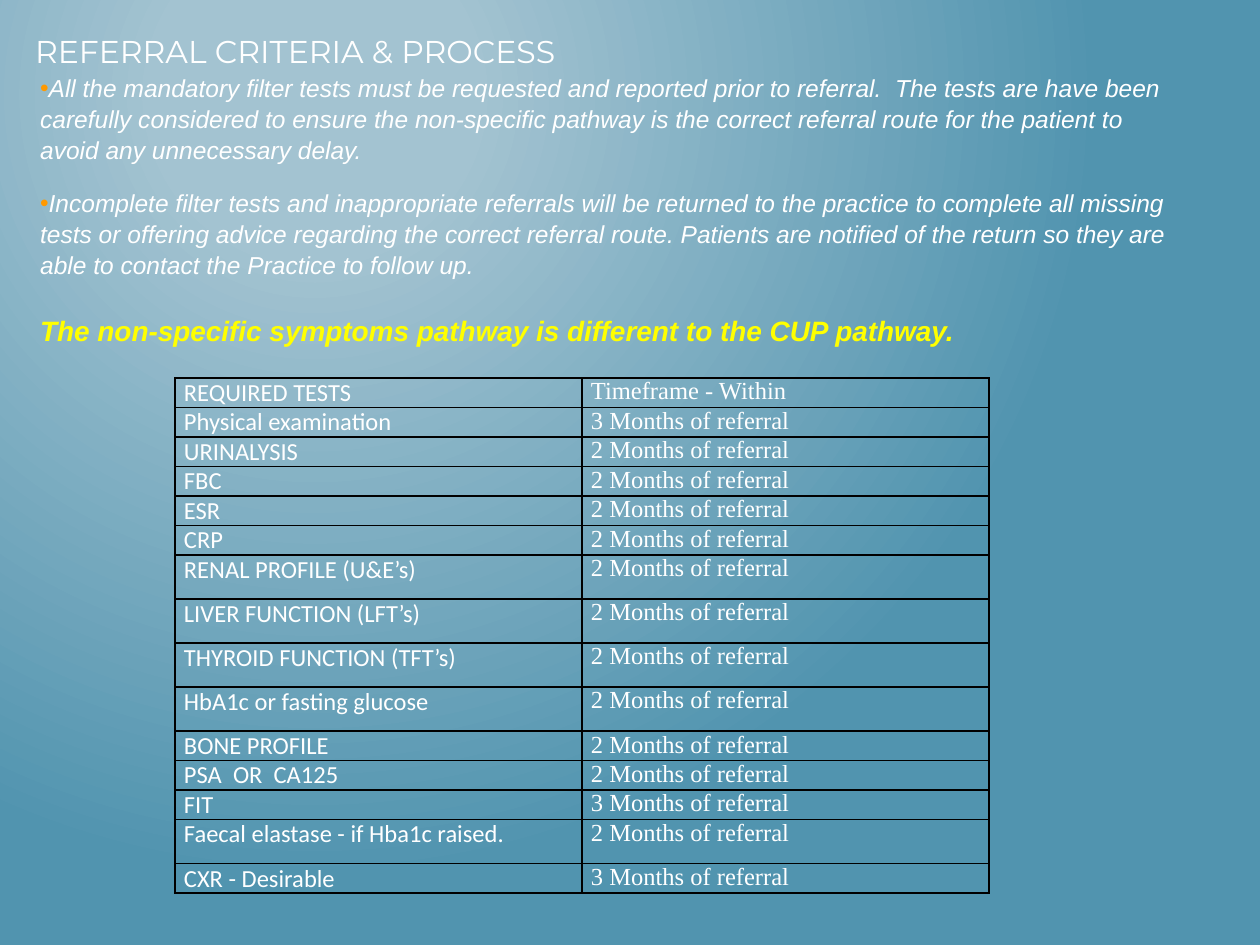
from lxml.etree import SubElement
from pptx import Presentation
from pptx.dml.color import RGBColor
from pptx.enum.text import MSO_ANCHOR
from pptx.oxml import parse_xml
from pptx.oxml.ns import nsdecls, qn
from pptx.util import Inches, Pt

HUES = {"light": "A3C3D1", "deep": "5194AF", "text": "FFFFFF",
        "key": "FFFF00", "dot": "FF9900", "line": "000000"}


def put(para, text, font="Arial", size=14, hue="text", bold=False,
        italic=False, before=0, spacing=1.0, bullet=False):
    para.space_before, para.space_after = Pt(before), Pt(0)
    para.line_spacing = spacing
    run = para.add_run()
    run.text = text
    face = run.font
    face.name, face.size = font, Pt(size)
    face.bold, face.italic = bold, italic
    face.color.rgb = RGBColor.from_string(HUES[hue])
    if bullet:
        props = para._p.get_or_add_pPr()
        props.set("marL", "0")
        props.set("indent", "0")
        tint = SubElement(props, qn("a:buClr"))
        SubElement(tint, qn("a:srgbClr"), val=HUES["dot"])
        SubElement(props, qn("a:buFont"), typeface="Arial")
        SubElement(props, qn("a:buChar"), char="•")


def edge(cell):
    props = cell._tc.get_or_add_tcPr()
    for spot, side in enumerate(("lnL", "lnR", "lnT", "lnB")):
        props.insert(spot, parse_xml(
            f'<a:{side} {nsdecls("a")} w="{Pt(1)}"><a:solidFill>'
            f'<a:srgbClr val="{HUES["line"]}"/></a:solidFill></a:{side}>'))


deck = Presentation()
deck.slide_width, deck.slide_height = Inches(10), Inches(7.5)
slide = deck.slides.add_slide(deck.slide_layouts[6])

# Radial background
fill = slide.background.fill
fill.gradient()
for stop, hue, place in zip(fill.gradient_stops, ("light", "deep"), (0.2, 1)):
    stop.color.rgb = RGBColor.from_string(HUES[hue])
    stop.position = place
grad = slide.element.find(".//" + qn("a:gradFill"))
grad.replace(grad.find(qn("a:lin")), parse_xml(
    f'<a:path {nsdecls("a")} path="circle">'
    '<a:fillToRect l="50000" t="20000" r="100000" b="100000"/></a:path>'))

# Guidance
box = slide.shapes.add_textbox(Inches(0.22), Inches(0.52), Inches(9.22), Inches(0.7))
frame = box.text_frame
frame.word_wrap = True
put(frame.paragraphs[0],
    "All the mandatory filter tests must be requested and reported prior to "
    "referral.  The tests are have been carefully considered to ensure the "
    "non-specific pathway is the correct referral route for the patient to "
    "avoid any unnecessary delay.",
    italic=True, spacing=1.05, bullet=True)
put(frame.add_paragraph(),
    "Incomplete filter tests and inappropriate referrals will be returned to "
    "the practice to complete all missing tests or offering advice regarding "
    "the correct referral route. Patients are notified of the return so they "
    "are able to contact the Practice to follow up.",
    italic=True, before=13, spacing=1.05, bullet=True)
put(frame.add_paragraph(),
    "The non-specific symptoms pathway is different to the CUP pathway.",
    size=16, hue="key", bold=True, italic=True, before=18.5, spacing=1.05)

# Title
box = slide.shapes.add_textbox(Inches(0.18), Inches(0.19), Inches(8.09), Inches(0.43))
frame = box.text_frame
frame.word_wrap = True
frame.vertical_anchor = MSO_ANCHOR.MIDDLE
put(frame.paragraphs[0], "REFERRAL CRITERIA & PROCESS", font="Montserrat", size=18)

# Tests: name, months allowed, row height
LOW, TALL = 0.23, 0.35
tests = [
    ("Physical examination", 3, LOW),
    ("URINALYSIS", 2, LOW),
    ("FBC", 2, LOW),
    ("ESR", 2, LOW),
    ("CRP", 2, LOW),
    ("RENAL PROFILE (U&E’s)", 2, TALL),
    ("LIVER FUNCTION (LFT’s)", 2, TALL),
    ("THYROID FUNCTION (TFT’s)", 2, TALL),
    ("HbA1c or fasting glucose", 2, TALL),
    ("BONE PROFILE", 2, LOW),
    ("PSA  OR  CA125", 2, LOW),
    ("FIT", 3, LOW),
    ("Faecal elastase - if Hba1c raised.", 2, TALL),
    ("CXR - Desirable", 3, LOW),
]
rows = [("REQUIRED TESTS", "Timeframe - Within", LOW)]
rows += [(name, f"{months} Months of referral", high) for name, months, high in tests]

# Table
table = slide.shapes.add_table(len(rows), 2, Inches(1.39), Inches(3), Inches(6.46),
                               Inches(sum(row[2] for row in rows))).table
table.first_row = table.horz_banding = False
for line, (name, limit, high) in zip(table.rows, rows):
    line.height = Inches(high)
    for cell, text, font in zip(line.cells, (name, limit), ("Calibri", "Times New Roman")):
        cell.margin_left = cell.margin_right = Inches(0.07)
        cell.margin_top = cell.margin_bottom = 0
        cell.fill.background()
        edge(cell)
        put(cell.text_frame.paragraphs[0], text, font=font)

deck.save("out.pptx")
